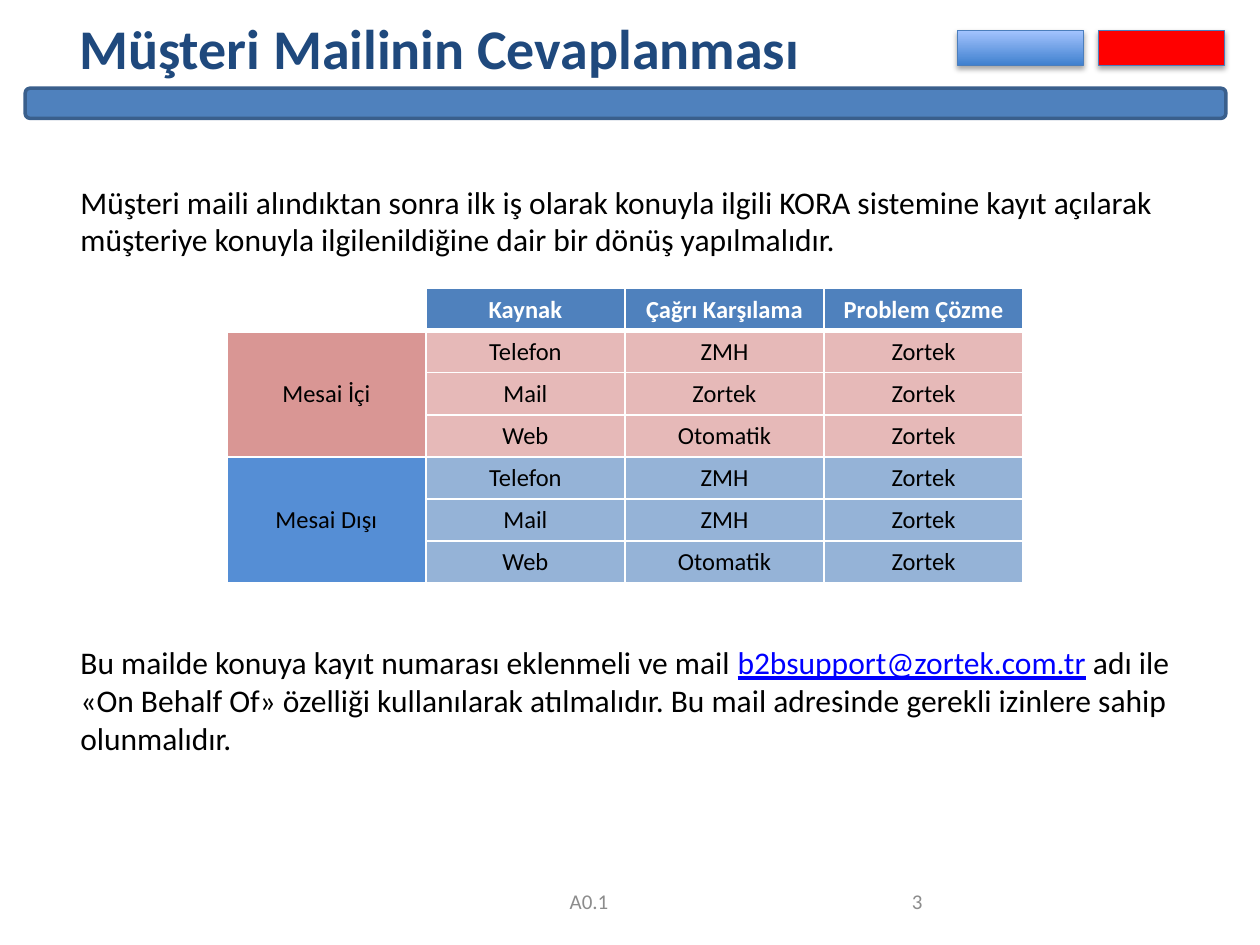
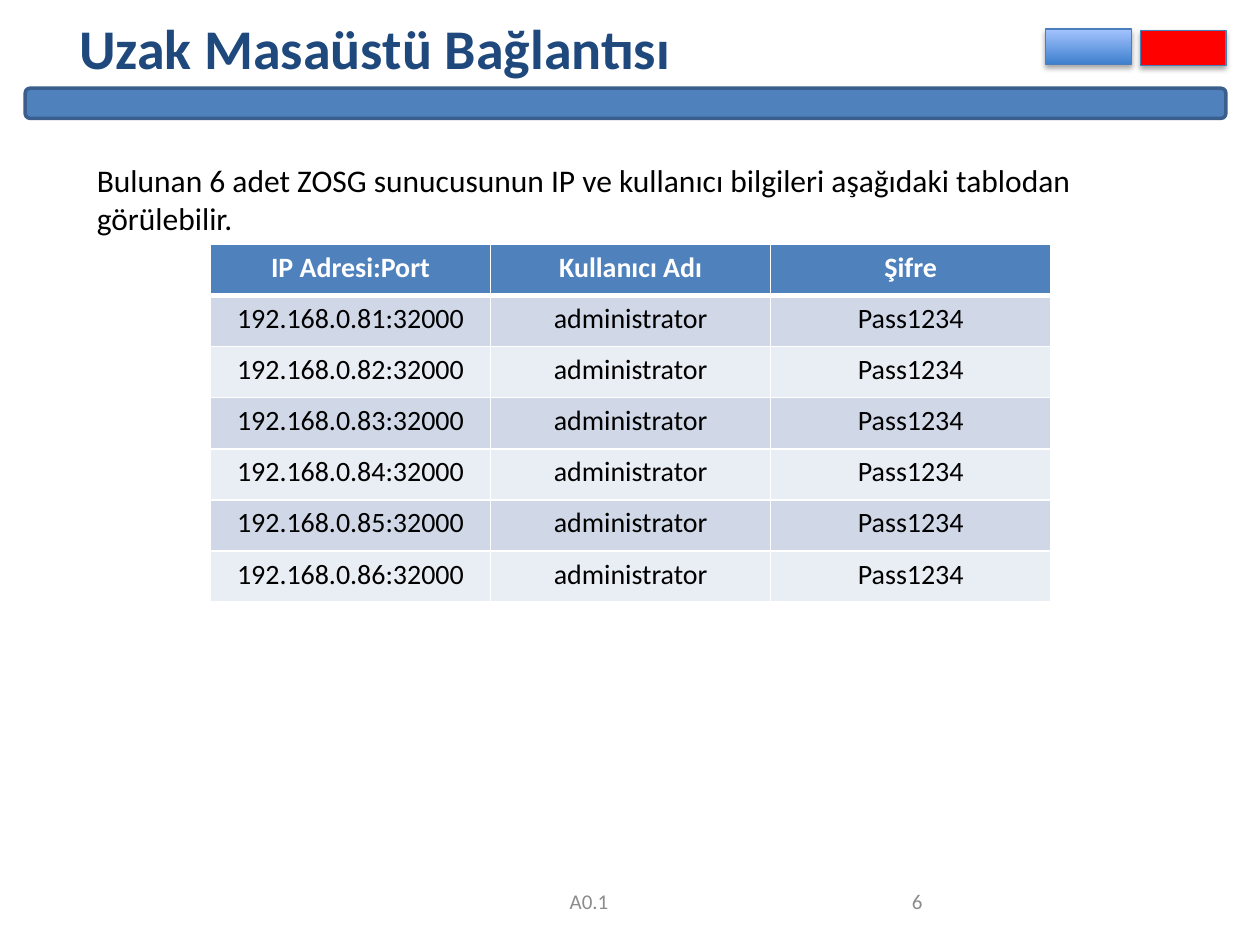
"""Builds two support-procedure slides, each with a banner, a short text and a table."""
from dataclasses import dataclass

from lxml.etree import SubElement
from pptx import Presentation
from pptx.dml.color import RGBColor
from pptx.enum.shapes import MSO_SHAPE
from pptx.enum.text import MSO_ANCHOR, MSO_AUTO_SIZE, PP_ALIGN
from pptx.oxml.ns import qn
from pptx.util import Inches, Pt


@dataclass(frozen=True)
class Theme:
    font: str = "Calibri"
    title: str = "1F497D"
    accent: str = "4F81BD"
    band_line: str = "3A5F8C"
    tag_line: str = "4B7EBC"
    tag_red: str = "FF0000"
    tag_blue: tuple = ("3F80CE", "A4C4FF")
    text: str = "000000"
    white: str = "FFFFFF"
    link: str = "0000FF"
    muted: str = "8C8C8C"
    work_hours: tuple = ("D99694", "E6B9B8")
    off_hours: tuple = ("558ED5", "95B3D7")
    stripes: tuple = ("D0D8E8", "E9EDF4")
    title_size: int = 32
    body_size: int = 18
    footer_size: int = 12


def rgb(color):
    return RGBColor.from_string(color)


class Deck:
    def __init__(self, theme):
        self.theme = theme
        self.prs = Presentation()
        self.prs.slide_width, self.prs.slide_height = Inches(10), Inches(7.5)
        self.slide = None

    def new_slide(self, title, title_width, number):
        theme = self.theme
        self.slide = self.prs.slides.add_slide(self.prs.slide_layouts[6])
        self.text((0.53, 0.06, title_width, 0.64), [title], theme.title_size, theme.title, bold=True)
        self.shape(MSO_SHAPE.ROUNDED_RECTANGLE, (0.2, 0.7, 9.53, 0.24), theme.accent, theme.band_line, 2)
        footers = ((3.88, "A0.1", PP_ALIGN.CENTER), (5.83, number, PP_ALIGN.RIGHT))
        for left, label, align in footers:
            self.text((left, 6.95, 1.59, 0.4), [label], theme.footer_size, theme.muted,
                      align=align, anchor=MSO_ANCHOR.MIDDLE, grow=False)

    def style(self, paragraph, size, color, bold=False, align=PP_ALIGN.LEFT):
        paragraph.alignment = align
        font = paragraph.font
        font.name, font.size, font.bold = self.theme.font, Pt(size), bold
        font.color.rgb = rgb(color)

    def text(self, at, paragraphs, size, color, bold=False, align=PP_ALIGN.LEFT,
             anchor=MSO_ANCHOR.TOP, grow=True):
        frame = self.slide.shapes.add_textbox(*map(Inches, at)).text_frame
        frame.word_wrap, frame.vertical_anchor = True, anchor
        frame.auto_size = MSO_AUTO_SIZE.SHAPE_TO_FIT_TEXT if grow else MSO_AUTO_SIZE.NONE
        for index, content in enumerate(paragraphs):
            paragraph = frame.add_paragraph() if index else frame.paragraphs[0]
            paragraph.add_run().text = content
            self.style(paragraph, size, color, bold, align)
        return frame

    def shape(self, kind, at, fill, line, line_width):
        shape = self.slide.shapes.add_shape(kind, *map(Inches, at))
        shape.shadow.inherit = False
        if isinstance(fill, tuple):
            shape.fill.gradient()
            shape.fill.gradient_angle = 90
            for stop, color, position in zip(shape.fill.gradient_stops, fill, (0, 1)):
                stop.color.rgb, stop.position = rgb(color), position
        else:
            shape.fill.solid()
            shape.fill.fore_color.rgb = rgb(fill)
        shape.line.color.rgb, shape.line.width = rgb(line), Pt(line_width)
        return shape

    def tag(self, at, fill):
        tag = self.shape(MSO_SHAPE.RECTANGLE, at, fill, self.theme.tag_line, 0.75)
        effects = tag.element.spPr.find(qn("a:effectLst"))
        shadow = SubElement(effects, qn("a:outerShdw"), blurRad=str(Pt(3.1)), dist=str(Pt(1.8)),
                            dir="5400000", rotWithShape="0")
        color = SubElement(shadow, qn("a:srgbClr"), val=self.theme.text)
        SubElement(color, qn("a:alpha"), val="35000")

    def borders(self, cell, bottom):
        properties = cell._tc.get_or_add_tcPr()
        for side, width in (("L", 1), ("R", 1), ("T", 1), ("B", bottom)):
            line = SubElement(properties, qn(f"a:ln{side}"), w=str(Pt(width)))
            SubElement(SubElement(line, qn("a:solidFill")), qn("a:srgbClr"), val=self.theme.white)

    def table(self, at, header, rows, fills, size):
        left, top, width, height = map(Inches, at)
        table = self.slide.shapes.add_table(len(rows) + 1, len(header), left, top, width, height).table
        table.horz_banding = False
        header_fills = [self.theme.accent if label else None for label in header]
        for r, (labels, colors) in enumerate(zip([header, *rows], [header_fills, *fills])):
            for c, (label, color) in enumerate(zip(labels, colors)):
                cell = table.cell(r, c)
                self.borders(cell, bottom=1 if r else 3)
                if color:
                    cell.fill.solid()
                    cell.fill.fore_color.rgb = rgb(color)
                else:
                    cell.fill.background()
                cell.text = label
                self.style(cell.text_frame.paragraphs[0], size,
                           self.theme.text if r else self.theme.white, r == 0, PP_ALIGN.CENTER)
        return table


def mail_reply_slide(deck):
    theme = deck.theme
    deck.new_slide("Müşteri Mailinin Cevaplanması", 7.43, "3")
    body = deck.text((0.54, 1.4, 8.9, 4.64), [
        "Müşteri maili alındıktan sonra ilk iş olarak konuyla ilgili KORA sistemine kayıt açılarak "
        "müşteriye konuyla ilgilenildiğine dair bir dönüş yapılmalıdır.",
        "Bu mailde konuya kayıt numarası eklenmeli ve mail ",
    ], theme.body_size, theme.text)
    instruction = body.paragraphs[1]
    instruction.space_before = Pt(220)
    address = instruction.add_run()
    address.text = "b2bsupport@zortek.com.tr"
    address.font.color.rgb, address.font.underline = rgb(theme.link), True
    instruction.add_run().text = (" adı ile «On Behalf Of» özelliği kullanılarak atılmalıdır. "
                                  "Bu mail adresinde gerekli izinlere sahip olunmalıdır.")
    deck.tag((8.72, 0.24, 1, 0.28), theme.tag_red)
    deck.tag((7.6, 0.24, 1, 0.28), theme.tag_blue)

    sources = ("Telefon", "Mail", "Web")
    shifts = (("Mesai İçi", ("ZMH", "Zortek", "Otomatik"), theme.work_hours),
              ("Mesai Dışı", ("ZMH", "ZMH", "Otomatik"), theme.off_hours))
    rows, fills = [], []
    for shift, answerers, (dark, light) in shifts:
        for index, (source, answerer) in enumerate(zip(sources, answerers)):
            rows.append(("" if index else shift, source, answerer, "Zortek"))
            fills.append((dark, light, light, light))
    duties = deck.table((1.8, 2.29, 6.32, 2.33), ("", "Kaynak", "Çağrı Karşılama", "Problem Çözme"),
                        rows, fills, 14)
    for first in range(1, len(rows), len(sources)):
        shift_cell = duties.cell(first, 0)
        shift_cell.merge(duties.cell(first + len(sources) - 1, 0))
        shift_cell.vertical_anchor = MSO_ANCHOR.MIDDLE


def remote_desktop_slide(deck):
    theme = deck.theme
    deck.new_slide("Uzak Masaüstü Bağlantısı", 8.19, "6")
    deck.text((0.67, 1.23, 8.9, 0.71), [
        "Bulunan 6 adet ZOSG sunucusunun IP ve kullanıcı bilgileri aşağıdaki tablodan görülebilir.",
    ], theme.body_size, theme.text)
    deck.tag((9.05, 0.24, 0.68, 0.28), theme.tag_red)
    deck.tag((8.3, 0.23, 0.68, 0.28), theme.tag_blue)
    servers = [(f"192.168.0.{host}:32000", "administrator", "Pass1234") for host in range(81, 87)]
    fills = [(theme.stripes[index % 2],) * 3 for index in range(len(servers))]
    deck.table((1.67, 1.94, 6.67, 2.84), ("IP Adresi:Port", "Kullanıcı Adı", "Şifre"),
               servers, fills, 16)


def main():
    deck = Deck(Theme())
    mail_reply_slide(deck)
    remote_desktop_slide(deck)
    deck.prs.save("out.pptx")


if __name__ == "__main__":
    main()
